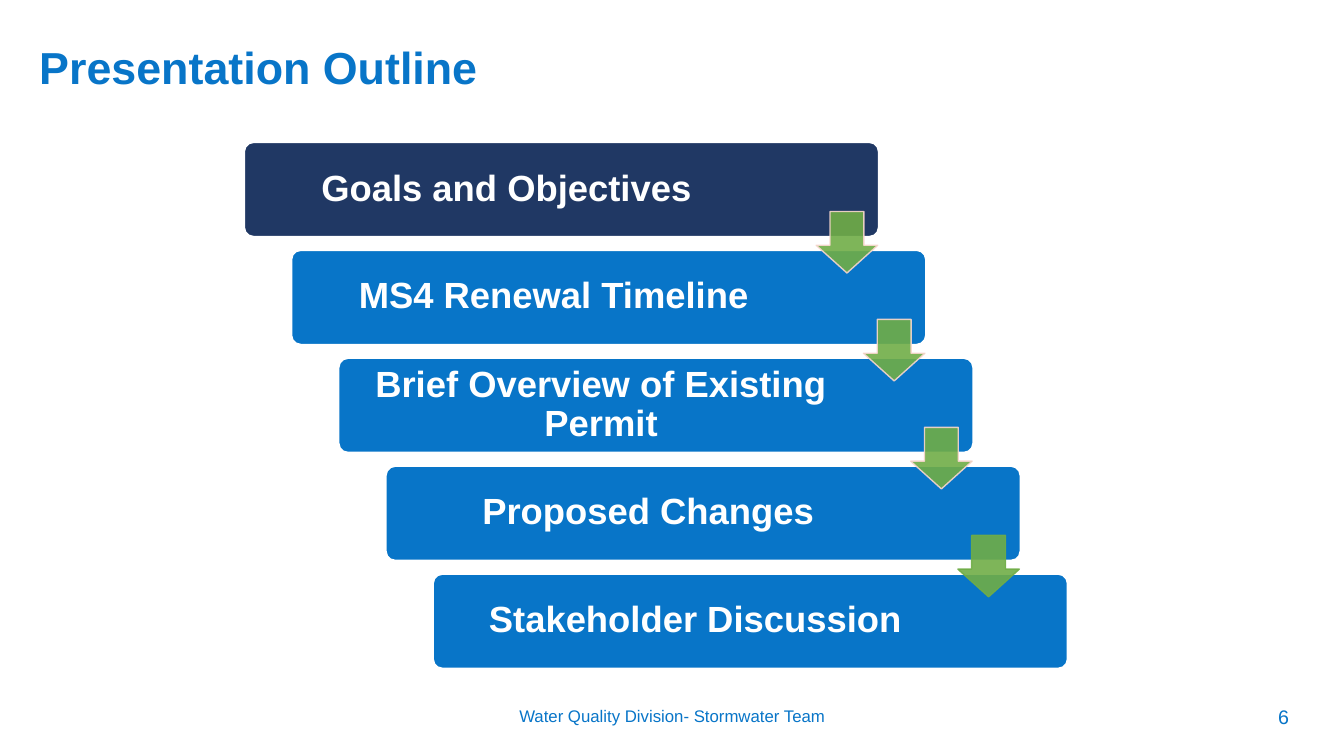
from lxml.etree import SubElement
from pptx import Presentation
from pptx.dml.color import RGBColor
from pptx.enum.shapes import MSO_SHAPE
from pptx.enum.text import MSO_ANCHOR, PP_ALIGN
from pptx.oxml.ns import qn
from pptx.util import Cm, Pt

COLORS = {
    "blue": "0875C8",
    "navy": "203864",
    "white": "FFFFFF",
    "green": "70AD47",
    "pink": "F8D7CE",
}
TOPICS = [
    "Goals and Objectives",
    "MS4 Renewal Timeline",
    "Brief Overview of Existing Permit",
    "Proposed Changes",
    "Stakeholder Discussion",
]
STEP_X, STEP_Y = 1.19, 2.72


def rgb(name):
    """Return the named colour."""
    return RGBColor.from_string(COLORS[name])


def add_text(shapes, box, text, size, color="blue", bold=False, align=PP_ALIGN.CENTER):
    """Add a wrapped one-paragraph text box and return its text frame."""
    tf = shapes.add_textbox(*map(Cm, box)).text_frame
    tf.word_wrap = True
    p = tf.paragraphs[0]
    p.text = text
    p.alignment = align
    p.font.name = "Arial"
    p.font.size = Pt(size)
    p.font.bold = bold
    p.font.color.rgb = rgb(color)
    return tf


def add_preset(shapes, kind, box, adjustments, fill, line, width):
    """Add a filled and outlined preset shape without shadow."""
    sp = shapes.add_shape(kind, *map(Cm, box))
    for i, value in enumerate(adjustments):
        sp.adjustments[i] = value
    sp.shadow.inherit = False
    sp.fill.solid()
    sp.fill.fore_color.rgb = rgb(fill)
    sp.line.color.rgb = rgb(line)
    sp.line.width = Pt(width)
    return sp


def add_topic(shapes, index, text):
    """Add one bar of the staircase with its label."""
    x, y = 6.15 + index * STEP_X, 3.58 + index * STEP_Y
    fill = "blue" if index else "navy"
    add_preset(shapes, MSO_SHAPE.ROUNDED_RECTANGLE, (x, y, 16, 2.39),
               [0.1], fill, "white", 1.5)
    tf = add_text(shapes, (x + 0.06, y + 0.07, 13.12, 2.24), text, 26, "white", True)
    tf.vertical_anchor = MSO_ANCHOR.MIDDLE
    tf.margin_left = tf.margin_right = tf.margin_top = tf.margin_bottom = Cm(0.28)
    tf.paragraphs[0].line_spacing = 0.9


def add_arrow(shapes, index, line):
    """Add a translucent arrow from one bar down to the next."""
    box = (20.57 + index * STEP_X, 5.33 + index * STEP_Y, 1.55, 1.55)
    sp = add_preset(shapes, MSO_SHAPE.DOWN_ARROW, box, [0.55, 0.45], "green", line, 1)
    for color in sp.element.spPr.iter(qn("a:srgbClr")):
        SubElement(color, qn("a:alpha"), val="90000")


def main():
    """Build the outline slide."""
    prs = Presentation()
    prs.slide_width, prs.slide_height = Cm(33.87), Cm(19.05)
    s = prs.slides.add_slide(prs.slide_layouts[6])

    title = add_text(s.shapes, (0.74, 1.02, 31.57, 1.73), "Presentation Outline",
                     32, bold=True, align=PP_ALIGN.LEFT)
    title.paragraphs[0].line_spacing = 0.9
    add_text(s.shapes, (11.23, 17.65, 11.43, 1.02),
             "Water Quality Division- Stormwater Team", 12)
    add_text(s.shapes, (31.22, 17.65, 2.26, 1.02), "6", 14)

    staircase = s.shapes.add_group_shape().shapes
    for i, topic in enumerate(TOPICS):
        add_topic(staircase, i, topic)
    for i, line in enumerate(["pink", "pink", "pink", "green"]):
        add_arrow(staircase, i, line)

    prs.save("out.pptx")


if __name__ == "__main__":
    main()
